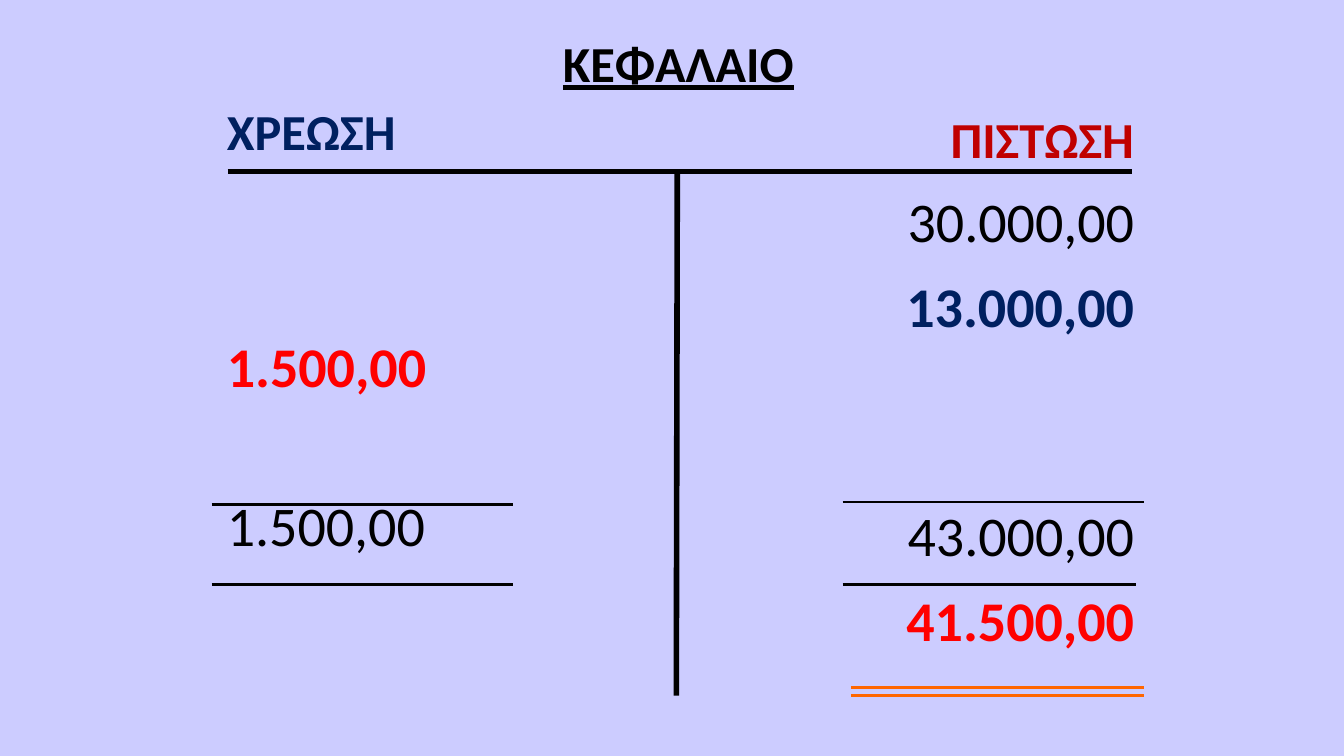
from lxml import etree
from pptx import Presentation, util as u
from pptx.dml.color import RGBColor
from pptx.enum import shapes, text
from pptx.oxml.ns import qn

COLORS = {"paper": "CCCCFF", "ink": "000000", "navy": "002060", "crimson": "C00000",
          "red": "FF0000", "orange": "FF6600", "shade": "000000"}
LEFT, CENTER, RIGHT = text.PP_ALIGN.LEFT, text.PP_ALIGN.CENTER, text.PP_ALIGN.RIGHT
TOP, MIDDLE = text.MSO_ANCHOR.TOP, text.MSO_ANCHOR.MIDDLE

# Entries: text, size, colour, bold, space before
title = [("ΚΕΦΑΛΑΙΟ", 36, "ink", True, 0)]
debit = [("ΧΡΕΩΣΗ", 36, "navy", True, 0),
         ("1.500,00", 40, "red", True, 126.8),
         ("1.500,00", 40, "ink", False, 70.4)]
credit = [("ΠΙΣΤΩΣΗ", 36, "crimson", True, 0),
          ("30.000,00", 40, "ink", False, 13),
          ("13.000,00", 40, "navy", True, 13),
          ("43.000,00", 40, "ink", False, 115),
          ("41.500,00", 40, "red", True, 13)]

# Boxes: entries, (left, top, width, height), alignment, anchor, line spacing, underline
boxes = [(title, (157, 16, 655, 57), CENTER, MIDDLE, 1.0, True),
         (debit, (151.2, 73, 323.3, 440), LEFT, TOP, 0.9, False),
         (credit, (496.8, 73.5, 320.4, 424), RIGHT, TOP, 1.0, False)]

# Rules: x1, y1, x2, y2, colour, weight
rules = [(483.8, 122.4, 483.1, 496.8, "ink", 4),
         (162.7, 122.4, 808.6, 122.4, "ink", 4),
         (601.9, 358.6, 817.2, 358.6, "ink", 2),
         (601.9, 417.4, 811.4, 417.4, "ink", 2),
         (151.2, 360.5, 366.5, 360.5, "ink", 2),
         (151.2, 417.4, 366.5, 417.4, "ink", 2),
         (607.7, 491, 817.2, 491, "orange", 2),
         (607.7, 496.8, 817.2, 496.8, "orange", 2)]


def rgb(name):
    return RGBColor.from_string(COLORS[name])


def assign(target, values):
    for key, value in values.items():
        setattr(target, key, value)


def add_text_shadow(r):
    effects = etree.Element(qn("a:effectLst"))
    shadow = etree.SubElement(effects, qn("a:outerShdw"), blurRad="38100",
                              dist="19050", dir="2700000", algn="tl")
    color = etree.SubElement(shadow, qn("a:srgbClr"), val=COLORS["shade"])
    etree.SubElement(color, qn("a:alpha"), val="40000")
    r.font.fill._xPr.find(qn("a:solidFill")).addnext(effects)


prs = Presentation()
assign(prs, {"slide_width": u.Pt(960), "slide_height": u.Pt(540)})
s = prs.slides.add_slide(prs.slide_layouts[6])
s.background.fill.solid()
s.background.fill.fore_color.rgb = rgb("paper")

# Title and the two account columns
for entries, area, align, anchor, spacing, underline in boxes:
    tf = s.shapes.add_textbox(*map(u.Pt, area)).text_frame
    assign(tf, {"word_wrap": True, "vertical_anchor": anchor})
    if align == LEFT:
        tf.margin_left = u.Pt(10.8)
    for i, (words, size, color, bold, before) in enumerate(entries):
        p = tf.add_paragraph() if i else tf.paragraphs[0]
        assign(p, {"alignment": align, "line_spacing": spacing})
        if i:
            p.space_before = u.Pt(before)
        r = p.add_run()
        r.text = words
        assign(r.font, {"name": "Calibri", "size": u.Pt(size), "bold": bold,
                        "underline": underline})
        r.font.color.rgb = rgb(color)
        add_text_shadow(r)

# T-account rules
for x1, y1, x2, y2, color, weight in rules:
    line = s.shapes.add_connector(shapes.MSO_CONNECTOR.STRAIGHT,
                                  *map(u.Pt, (x1, y1, x2, y2)))
    line.line.color.rgb = rgb(color)
    line.line.width = u.Pt(weight)
    etree.SubElement(line._element.spPr, qn("a:effectLst"))

prs.save("out.pptx")
